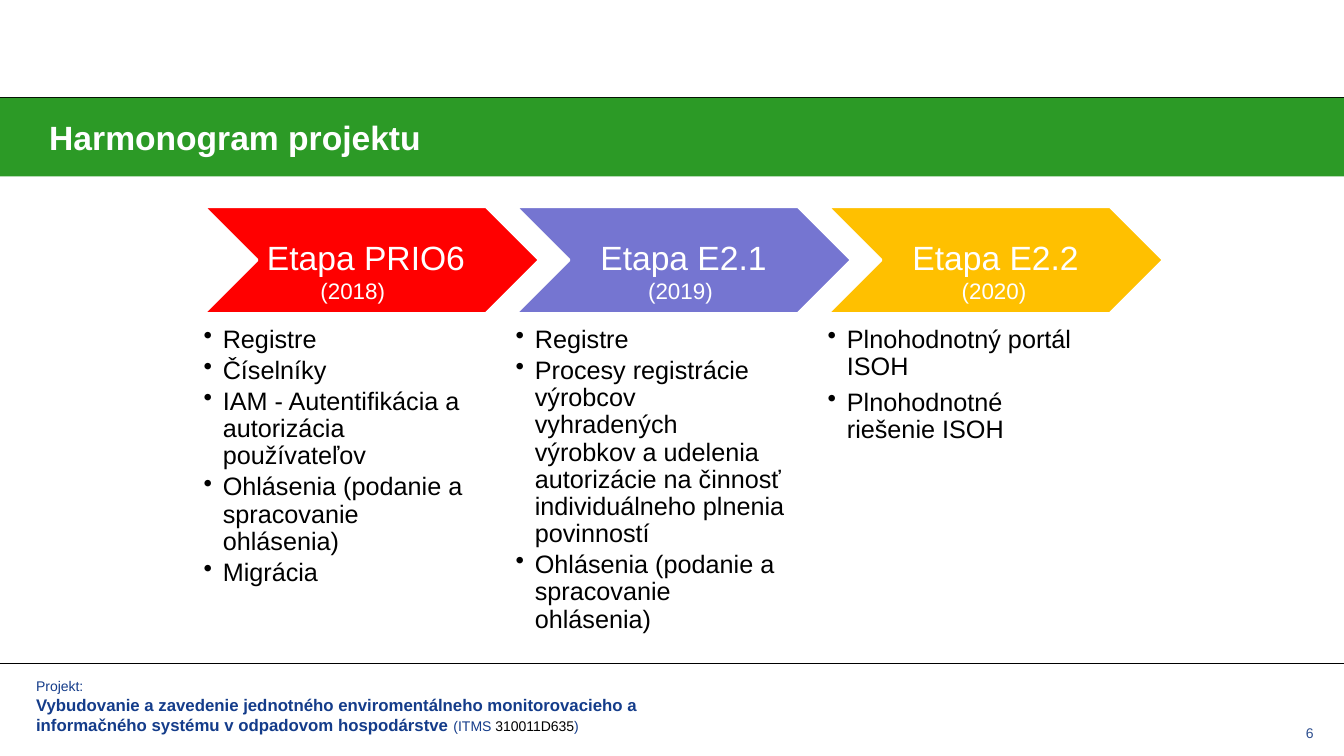
from dataclasses import dataclass

from lxml import etree
from pptx import Presentation
from pptx import util as u
from pptx.dml.color import RGBColor
from pptx.enum import shapes, text
from pptx.oxml import ns

FONT = "Arial"
WHITE, BLACK, NAVY = "FFFFFF", "000000", "143C8A"
SLIDE_WIDTH = 13.33
FIRST_STAGE_LEFT, STAGE_PITCH = 2.02, 3.095
BULLET_INDENT = 0.19


@dataclass
class Stage:
    name: str
    year: str
    year_left: float
    color: str
    tasks: list[str]
    task_gap: float  # points after each task
    align: text.PP_ALIGN = text.PP_ALIGN.CENTER


STAGES = [
    Stage("Etapa PRIO6", "(2018)", 3.08, "FF0000",
          ["Registre", "Číselníky",
           "IAM - Autentifikácia a autorizácia používateľov",
           "Ohlásenia (podanie a spracovanie ohlásenia)", "Migrácia"],
          2.7, text.PP_ALIGN.LEFT),
    Stage("Etapa E2.1", "(2019)", 6.33, "7575D1",
          ["Registre",
           "Procesy registrácie výrobcov vyhradených výrobkov a udelenia "
           "autorizácie na činnosť individuálneho plnenia povinností",
           "Ohlásenia (podanie a spracovanie ohlásenia)"], 2.7),
    Stage("Etapa E2.2", "(2020)", 9.44, "FFC000",
          ["Plnohodnotný portál ISOH", "Plnohodnotné riešenie ISOH"], 6.3),
]


def rgb(color: str) -> RGBColor:
    return RGBColor.from_string(color)


def add_run(paragraph, words: str, size: float, color: str, bold: bool = False) -> None:
    run = paragraph.add_run()
    run.text = words
    run.font.name = FONT
    run.font.size = u.Pt(size)
    run.font.bold = bold
    run.font.color.rgb = rgb(color)


def set_frame(shape, anchor, left: float = 0.1, top: float = 0.05):
    """Set wrapping, anchor and symmetric margins; return the text frame."""
    frame = shape.text_frame
    frame.word_wrap = True
    frame.vertical_anchor = anchor
    frame.margin_left = frame.margin_right = u.Inches(left)
    frame.margin_top = frame.margin_bottom = u.Inches(top)
    return frame


def add_box(slide, left: float, top: float, width: float, height: float,
            anchor=text.MSO_ANCHOR.MIDDLE, margin: tuple[float, float] = (0.1, 0.05)):
    box = slide.shapes.add_textbox(*map(u.Inches, (left, top, width, height)))
    return set_frame(box, anchor, *margin)


def add_filled(slide, kind, left: float, top: float, width: float, height: float, color: str):
    shape = slide.shapes.add_shape(kind, *map(u.Inches, (left, top, width, height)))
    shape.shadow.inherit = False
    shape.fill.solid()
    shape.fill.fore_color.rgb = rgb(color)
    shape.line.fill.background()
    return shape


def add_rule(slide, top: float) -> None:
    rule = slide.shapes.add_connector(
        shapes.MSO_CONNECTOR.STRAIGHT, 0, u.Inches(top), u.Inches(SLIDE_WIDTH), u.Inches(top))
    rule.line.color.rgb = rgb(BLACK)
    rule.line.width = u.Pt(0.5)
    etree.SubElement(rule._element.spPr, ns.qn("a:effectLst"))


def set_indent(paragraph, left: float, first: float = 0) -> None:
    properties = paragraph._p.get_or_add_pPr()
    properties.set("marL", str(u.Inches(left)))
    properties.set("indent", str(u.Inches(first)))


def add_tasks(slide, stage: Stage, left: float) -> None:
    frame = add_box(slide, left, 3.24, 2.67, 3, text.MSO_ANCHOR.TOP, (0, 0))
    for index, task in enumerate(stage.tasks):
        paragraph = frame.paragraphs[0] if index == 0 else frame.add_paragraph()
        paragraph.line_spacing = 0.9
        paragraph.space_after = u.Pt(stage.task_gap)
        set_indent(paragraph, BULLET_INDENT, -BULLET_INDENT)
        bullet = etree.SubElement(paragraph._p.get_or_add_pPr(), ns.qn("a:buChar"))
        bullet.set("char", "•")
        add_run(paragraph, task, 18, BLACK)


def add_stage(slide, stage: Stage, left: float) -> None:
    arrow = add_filled(slide, shapes.MSO_SHAPE.CHEVRON, left, 2.05, 3.33, 1.06, stage.color)
    arrow.line.color.rgb = rgb(WHITE)
    arrow.line.width = u.Pt(2)
    heading = set_frame(arrow, text.MSO_ANCHOR.MIDDLE, 0.1, 0.04).paragraphs[0]
    heading.alignment = stage.align
    heading.line_spacing = 0.9
    add_run(heading, stage.name, 24, WHITE)
    add_tasks(slide, stage, left)


def add_title(slide) -> None:
    band = add_filled(slide, shapes.MSO_SHAPE.RECTANGLE, 0, 0.97, SLIDE_WIDTH, 0.78, "2C9A26")
    title = set_frame(band, text.MSO_ANCHOR.MIDDLE).paragraphs[0]
    title.alignment = text.PP_ALIGN.LEFT
    set_indent(title, 0.39)
    add_run(title, "Harmonogram projektu", 24, WHITE, bold=True)


def add_footer(slide) -> None:
    footer = add_box(slide, 0.26, 6.67, 6.4, 0.67)
    add_run(footer.paragraphs[0], "Projekt:", 10, NAVY)
    project = footer.add_paragraph()
    add_run(project, "Vybudovanie a zavedenie jednotného enviromentálneho monitorovacieho "
                     "a informačného systému v odpadovom hospodárstve ", 12, NAVY, bold=True)
    for words, color in (("(ITMS ", NAVY), ("310011D635", BLACK), (")", NAVY)):
        add_run(project, words, 10, color)

    page = add_box(slide, 12.65, 7.14, 0.68, 0.36, text.MSO_ANCHOR.TOP).paragraphs[0]
    page.alignment = text.PP_ALIGN.CENTER
    add_run(page, "6", 10, "2E4F8F")


def main() -> None:
    deck = Presentation()
    deck.slide_width, deck.slide_height = u.Inches(SLIDE_WIDTH), u.Inches(7.5)
    slide = deck.slides.add_slide(deck.slide_layouts[6])

    # Frame of the slide
    add_rule(slide, 0.97)
    add_rule(slide, 6.58)
    add_title(slide)
    add_footer(slide)

    # Project stages
    for index, stage in enumerate(STAGES):
        add_stage(slide, stage, FIRST_STAGE_LEFT + index * STAGE_PITCH)

    # Years, above the arrows
    for stage in STAGES:
        year = add_box(slide, stage.year_left, 2.7, 1.29, 0.37)
        add_run(year.paragraphs[0], stage.year, 16, WHITE)

    deck.save("out.pptx")


if __name__ == "__main__":
    main()
